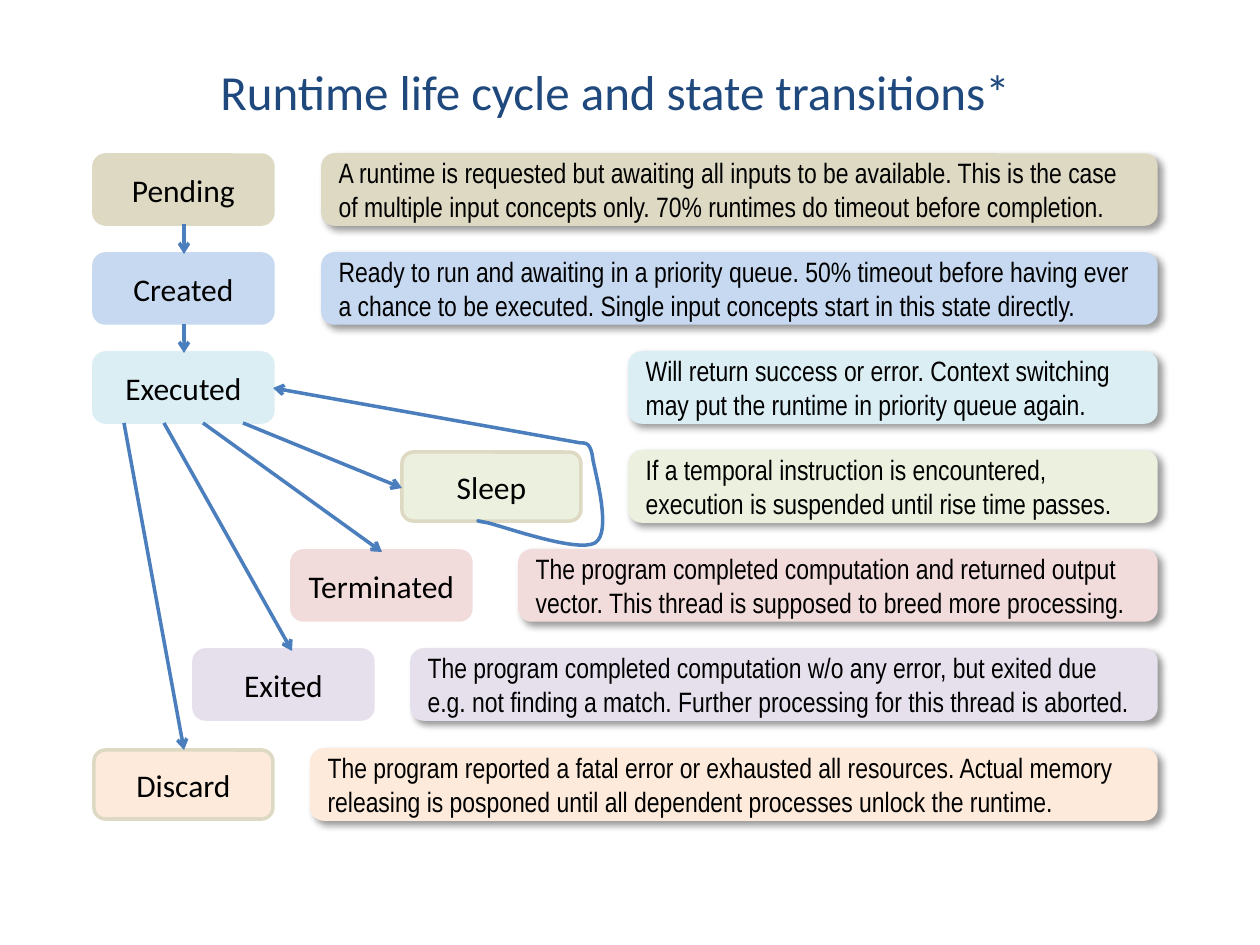
from dataclasses import dataclass

from lxml import etree
from pptx import Presentation
from pptx.dml.color import RGBColor
from pptx.enum.shapes import MSO_CONNECTOR, MSO_SHAPE
from pptx.enum.text import MSO_ANCHOR, MSO_AUTO_SIZE, PP_ALIGN
from pptx.oxml.ns import qn
from pptx.util import Inches, Pt

ROUNDED = MSO_SHAPE.ROUNDED_RECTANGLE
STRAIGHT = MSO_CONNECTOR.STRAIGHT
CENTER, LEFT = PP_ALIGN.CENTER, PP_ALIGN.LEFT
MIDDLE, TOP = MSO_ANCHOR.MIDDLE, MSO_ANCHOR.TOP
PX = 7257  # EMU per px, 126 px to the inch


@dataclass(frozen=True)
class Theme:
    title: str = "1F497D"
    text: str = "000000"
    arrow: str = "4B7EBC"
    tan: str = "DDD9C3"
    blue: str = "C6D9F1"
    aqua: str = "DBEEF4"
    green: str = "EBF1DE"
    red: str = "F2DCDB"
    purple: str = "E6E0EC"
    orange: str = "FDEADA"
    heading_font: str = "Calibri"
    body_font: str = "Arial Narrow"
    title_size: int = 28
    state_size: int = 18
    note_size: int = 16
    line_width: int = 2


T = Theme()


def write(sp, text, size, font=T.heading_font, color=T.text, align=CENTER,
          anchor=MIDDLE, wrap=True):
    tf = sp.text_frame
    tf.word_wrap = wrap
    tf.vertical_anchor = anchor
    p = tf.paragraphs[0]
    p.alignment = align
    r = p.add_run()
    r.text = text
    r.font.name = font
    r.font.size = Pt(size)
    r.font.color.rgb = RGBColor.from_string(color)


def set_line(sp, color):
    sp.line.color.rgb = RGBColor.from_string(color)
    sp.line.width = Pt(T.line_width)


prs = Presentation()
prs.slide_width, prs.slide_height = Inches(10), Inches(7.5)
s = prs.slides.add_slide(prs.slide_layouts[6])

title = s.shapes.add_textbox(203 * PX, 55 * PX, 824 * PX, 72 * PX)
write(title, "Runtime life cycle and state transitions*", T.title_size,
      color=T.title, anchor=TOP, wrap=False)
title.text_frame.auto_size = MSO_AUTO_SIZE.SHAPE_TO_FIT_TEXT

# One row per state: name, left, fill, outline, note left, note
STATES = [
    ("Pending", 94, T.tan, T.tan, 323,
     "A runtime is requested but awaiting all inputs to be available. This is the case "
     "of multiple input concepts only. 70% runtimes do timeout before completion."),
    ("Created", 94, T.blue, T.blue, 323,
     "Ready to run and awaiting in a priority queue. 50% timeout before having ever "
     "a chance to be executed. Single input concepts start in this state directly."),
    ("Executed", 94, T.aqua, T.aqua, 630,
     "Will return success or error. Context switching "
     "may put the runtime in priority queue again."),
    ("Sleep", 402, T.green, T.tan, 630,
     "If a temporal instruction is encountered, "
     "execution is suspended until rise time passes."),
    ("Terminated", 292, T.red, T.red, 520,
     "The program completed computation and returned output "
     "vector. This thread is supposed to breed more processing."),
    ("Exited", 194, T.purple, T.purple, 412,
     "The program completed computation w/o any error, but exited due "
     "e.g. not finding a match. Further processing for this thread is aborted."),
    ("Discard", 94, T.orange, T.tan, 312,
     "The program reported a fatal error or exhausted all resources. Actual memory "
     "releasing is posponed until all dependent processes unlock the runtime."),
]
FIRST_TOP, LAST_TOP = 155, 750
STATE_W, ROW_H, NOTE_RIGHT = 179, 69, 1156

for i, (name, left, fill, outline, note_left, note) in enumerate(STATES):
    top = FIRST_TOP + (LAST_TOP - FIRST_TOP) * i // (len(STATES) - 1)
    state_box, note_box = [
        s.shapes.add_shape(ROUNDED, x * PX, top * PX, w * PX, ROW_H * PX)
        for x, w in ((left, STATE_W), (note_left, NOTE_RIGHT - note_left))
    ]
    for sp, line_color in ((state_box, outline), (note_box, fill)):
        sp.shadow.inherit = False
        sp.fill.solid()
        sp.fill.fore_color.rgb = RGBColor.from_string(fill)
        set_line(sp, line_color)
    write(state_box, name, T.state_size)
    write(note_box, note, T.note_size, font=T.body_font, align=LEFT)

    effects = note_box._element.spPr.find(qn("a:effectLst"))
    shadow = etree.SubElement(effects, qn("a:outerShdw"), blurRad=str(Pt(4)),
                              dist=str(Pt(3)), dir="2700000", algn="tl", rotWithShape="0")
    shade = etree.SubElement(shadow, qn("a:srgbClr"), val=T.text)
    etree.SubElement(shade, qn("a:alpha"), val="40000")

ARROWS = [
    (184, 224, 184, 254),  # Pending to Created
    (184, 324, 184, 353),  # Created to Executed
    (124, 423, 184, 750),  # Executed to Discard
    (164, 423, 292, 651),  # Executed to Exited
    (203, 423, 382, 552),  # Executed to Terminated
    (243, 423, 402, 488),  # Executed to Sleep
    (581, 443, 273, 388),  # Sleep back to Executed
]
for ends in ARROWS:
    arrow = s.shapes.add_connector(STRAIGHT, *(v * PX for v in ends))
    set_line(arrow, T.arrow)
    spPr = arrow._element.spPr
    etree.SubElement(spPr.find(qn("a:ln")), qn("a:tailEnd"), type="arrow")
    etree.SubElement(spPr, qn("a:effectLst"))

# Loop around Sleep: cubic Bézier segments drawn as short steps
LOOP_START = (581, 443)
LOOP_CURVES = [
    ((586, 443), (591, 443), (593, 460)),
    ((596, 476), (612, 533), (595, 543)),
    ((577, 553), (505, 527), (488, 523)),
    ((470, 519), (480, 522), (489, 523)),
]
STEPS = 16
points, p0 = [], LOOP_START
for p1, p2, p3 in LOOP_CURVES:
    for step in range(1, STEPS + 1):
        t = step / STEPS
        u = 1 - t
        points.append(tuple(
            round((u**3 * a + 3 * u**2 * t * b + 3 * u * t**2 * c + t**3 * d) * PX)
            for a, b, c, d in zip(p0, p1, p2, p3)))
    p0 = p3
builder = s.shapes.build_freeform(*(v * PX for v in LOOP_START))
builder.add_line_segments(points, close=False)
loop = builder.convert_to_shape()
loop.shadow.inherit = False
loop.fill.background()
set_line(loop, T.arrow)

prs.save("out.pptx")
